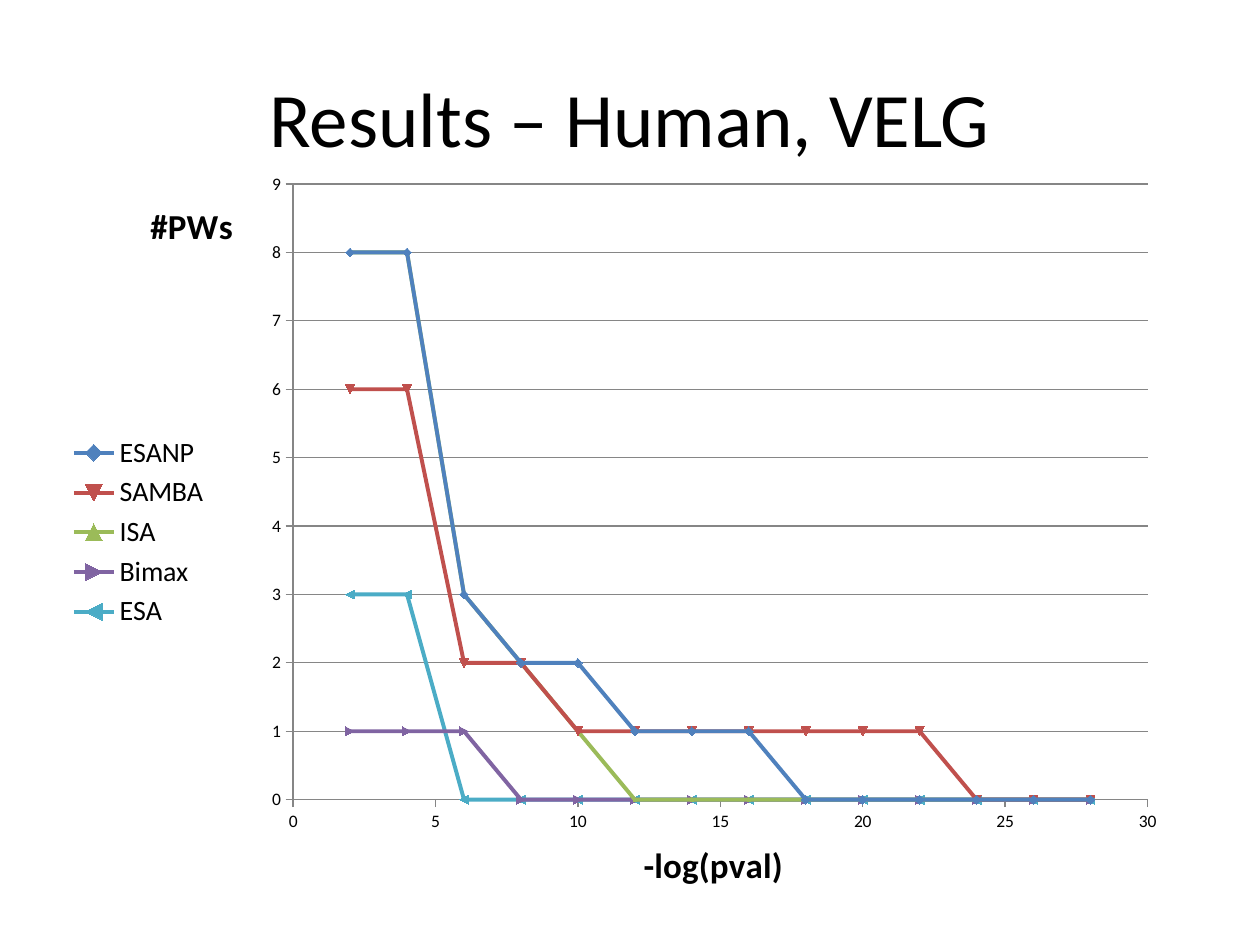
from pptx import Presentation
from pptx.chart.data import XyChartData
from pptx.dml.color import RGBColor
from pptx.enum import chart as ch, text
from pptx.oxml import parse_xml
from pptx.oxml.ns import nsdecls, qn
from pptx.util import Pt

FONT = "Calibri"
COLORS = {
    "text": "000000", "grid": "868686",
    "ESANP": "4F81BD", "SAMBA": "C0504D", "ISA": "9BBB59",
    "Bimax": "8064A2", "ESA": "4BACC6",
}
X_VALS = range(28, 0, -2)
COUNTS = {
    "ESANP": [0, 0, 0, 0, 0, 0, 1, 1, 1, 2, 2, 3, 8, 8],
    "SAMBA": [0, 0, 0, 1, 1, 1, 1, 1, 1, 1, 2, 2, 6, 6],
    "ISA": [0, 0, 0, 0, 0, 0, 0, 0, 0, 1, 2, 3, 8, 8],
    "Bimax": [0, 0, 0, 0, 0, 0, 0, 0, 0, 0, 0, 1, 1, 1],
    "ESA": [0, 0, 0, 0, 0, 0, 0, 0, 0, 0, 0, 0, 3, 3],
}


def color(key):
    return RGBColor.from_string(COLORS[key])


def style(font, size, bold=False):
    font.name, font.size, font.bold = FONT, Pt(size), bold
    font.color.rgb = color("text")


def stroke(line, key, width):
    line.color.rgb = color(key)
    line.width = Pt(width)


def layout(**vals):
    """Return a manual layout; sizes and places are parts of the chart."""
    inner = '<c:layoutTarget val="inner"/>' if "w" in vals else ""
    modes = "".join(f'<c:{k}Mode val="edge"/>' for k in "xy")
    sides = "".join(f'<c:{k} val="{v}"/>' for k, v in vals.items())
    return parse_xml(f"<c:layout {nsdecls('c')}><c:manualLayout>"
                     f"{inner}{modes}{sides}</c:manualLayout></c:layout>")


def drop(parent):
    """Remove any layout that the parent already has."""
    for old in parent.findall(qn("c:layout")):
        parent.remove(old)


def set_title(slide, words):
    title = slide.shapes.title
    title.left, title.top = Pt(36), Pt(21.6)
    title.width, title.height = Pt(648), Pt(90)
    frame = title.text_frame
    frame.text = words
    frame.vertical_anchor = text.MSO_ANCHOR.MIDDLE
    par = frame.paragraphs[0]
    par.alignment = text.PP_ALIGN.CENTER
    style(par.runs[0].font, 44)


def set_axis(axis, words, x, y, top, step):
    axis.minimum_scale, axis.maximum_scale = 0, top
    axis.major_unit = step
    axis.major_tick_mark = ch.XL_TICK_MARK.OUTSIDE
    axis.minor_tick_mark = ch.XL_TICK_MARK.NONE
    axis.tick_labels.number_format = "General"
    axis.tick_labels.number_format_is_linked = False
    style(axis.tick_labels.font, 10)
    stroke(axis.format.line, "grid", 0.75)
    frame = axis.axis_title.text_frame
    frame.text = words
    style(frame.paragraphs[0].runs[0].font, 20, True)
    body = frame._txBody.find(qn("a:bodyPr"))
    body.set("rot", "0")
    body.set("vert", "horz")
    node = axis.axis_title._element
    drop(node)
    node.find(qn("c:tx")).addnext(layout(x=x, y=y))


def add_plot(slide):
    data = XyChartData()
    for name, vals in COUNTS.items():
        row = data.add_series(name)
        for x, y in zip(X_VALS, vals):
            row.add_data_point(x, y)
    chart = slide.shapes.add_chart(
        ch.XL_CHART_TYPE.XY_SCATTER_LINES,
        Pt(31), Pt(94.3), Pt(640.8), Pt(419.8), data).chart
    style(chart.font, 10)
    chart.has_title = False
    chart.has_legend = True
    chart.legend.position = ch.XL_LEGEND_POSITION.LEFT
    chart.legend.include_in_layout = False
    style(chart.legend.font, 16)

    plot = chart.plots[0]
    plot.vary_by_categories = False
    for row in plot.series:
        row.smooth = False
        stroke(row.format.line, row.name, 2.25)
        mark = row.marker
        mark.size = 5
        mark.format.fill.solid()
        mark.format.fill.fore_color.rgb = color(row.name)
        stroke(mark.format.line, row.name, 0.75)
        if row.name == "ISA":
            mark.style, mark.size = ch.XL_MARKER_STYLE.TRIANGLE, 2

    set_axis(chart.category_axis, "-log(pval)", 0.52, 0.91, 30, 5)
    set_axis(chart.value_axis, "#PWs", 0.08, 0.04, 9, 1)
    chart.category_axis.has_major_gridlines = False
    chart.value_axis.has_major_gridlines = True
    stroke(chart.value_axis.major_gridlines.format.line, "grid", 0.75)
    area = chart._chartSpace.chart.plotArea
    drop(area)
    area.insert(0, layout(x=0.213, y=0.026, w=0.762, h=0.838))


def main():
    deck = Presentation()
    deck.slide_width, deck.slide_height = Pt(720), Pt(540)
    slide = deck.slides.add_slide(deck.slide_layouts[5])
    set_title(slide, "Results – Human, VELG")
    add_plot(slide)
    deck.save("out.pptx")


if __name__ == "__main__":
    main()
